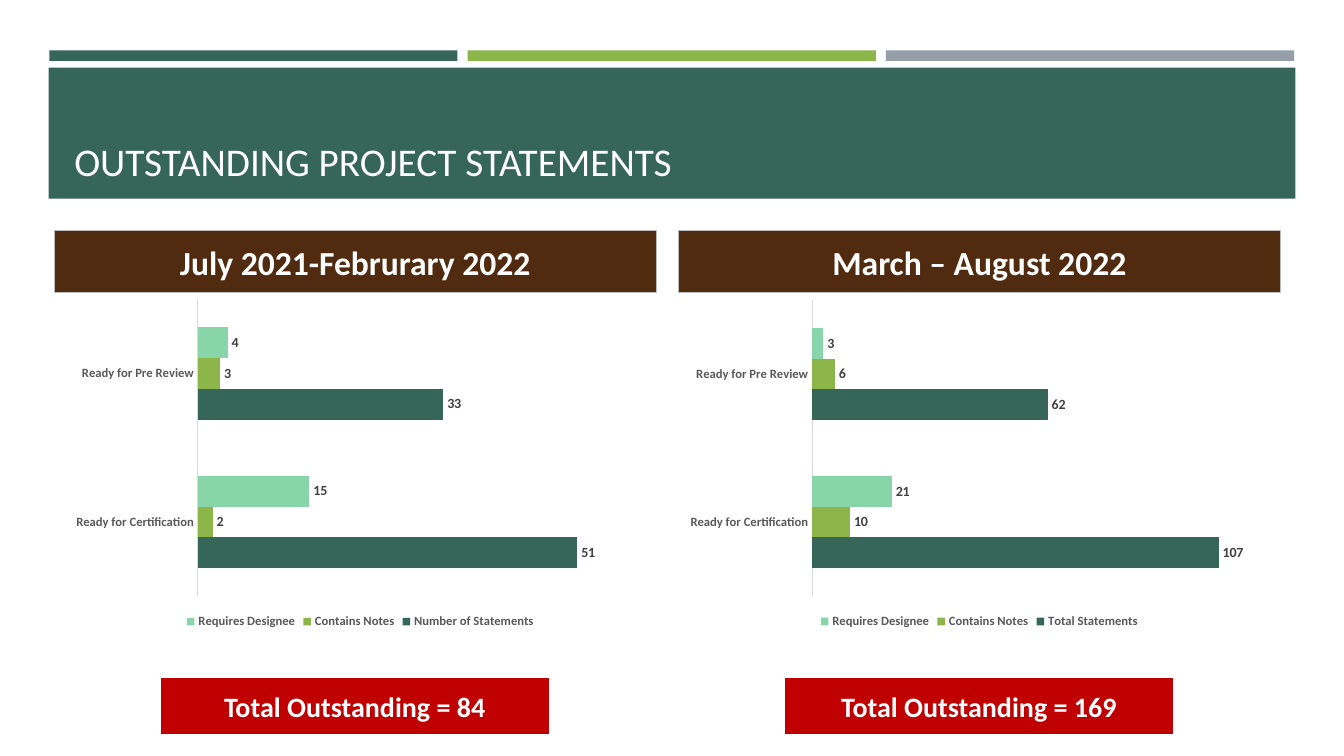
"""Build the slide on outstanding project statements with two bar charts."""
import pptx
import pptx.chart.data
import pptx.dml.color
import pptx.enum.chart
import pptx.enum.shapes
import pptx.enum.text
import pptx.util

Pt = pptx.util.Pt
enum = pptx.enum
FONT = "Calibri"
HUES = {
    "green": "366658", "lime": "8CB64A", "mint": "88D5A9", "gray": "969FA7",
    "brown": "502B10", "edge": "BDBDBD", "red": "C00000", "white": "FFFFFF",
    "axis": "D9D9D9", "text": "595959", "label": "404040",
}


def style(font, size, hue, bold=True):
    font.name = FONT
    font.size = Pt(size)
    font.bold = bold
    font.color.rgb = pptx.dml.color.RGBColor.from_string(HUES[hue])


def box(place, fill, line=None, text="", size=0, bold=True, title=False):
    left, top, width, height = place
    shape = slide.shapes.add_shape(
        enum.shapes.MSO_SHAPE.RECTANGLE, Pt(left), Pt(top), Pt(width), Pt(height))
    shape.shadow.inherit = False
    shape.fill.solid()
    shape.fill.fore_color.rgb = pptx.dml.color.RGBColor.from_string(HUES[fill])
    if line:
        shape.line.color.rgb = pptx.dml.color.RGBColor.from_string(HUES[line])
        shape.line.width = Pt(0.75)
    else:
        shape.line.fill.background()
    if text:
        frame = shape.text_frame
        frame.word_wrap = True
        frame.vertical_anchor = enum.text.MSO_ANCHOR.MIDDLE
        para = frame.paragraphs[0]
        para.alignment = enum.text.PP_ALIGN.CENTER
        run = para.add_run()
        run.text = text
        style(run.font, size, "white", bold)


deck = pptx.Presentation()
deck.slide_width = Pt(960)
deck.slide_height = Pt(540)
slide = deck.slides.add_slide(deck.slide_layouts[6])

for col, hue in enumerate(("green", "lime", "gray")):
    box((35.2 + 298.8 * col, 36, 291.6, 7.5), hue)
box((34.7, 48.3, 890.6, 93.6), "green")

title = slide.shapes.add_textbox(Pt(46), Pt(55.5), Pt(868.3), Pt(80))
title.text_frame.word_wrap = True
title.text_frame.vertical_anchor = enum.text.MSO_ANCHOR.BOTTOM
run = title.text_frame.paragraphs[0].add_run()
run.text = "OUTSTANDING PROJECT STATEMENTS"
style(run.font, 28, "white", False)

cats = ("Ready for Certification", "Ready for Pre Review")
panels = (
    ("July 2021-Februrary 2022", "Total Outstanding = 84", (46, 208.8, 422.7, 243.4),
     (("Number of Statements", (51, 33)), ("Contains Notes", (2, 3)),
      ("Requires Designee", (15, 4)))),
    ("March – August 2022", "Total Outstanding = 169", (484.6, 209.5, 429.8, 242.6),
     (("Total Statements", (107, 62)), ("Contains Notes", (10, 6)),
      ("Requires Designee", (21, 3)))),
)
for col, (head, total, place, rows) in enumerate(panels):
    shift = 445.8 * col
    box((38.9 + shift, 164.9, 429.8, 43.9), "brown", "edge", head, 24)
    box((115.2 + shift, 484.6, 276.5, 39.6), "red", "red", total, 20)

    data = pptx.chart.data.CategoryChartData()
    data.categories = cats
    for name, vals in rows:
        data.add_series(name, vals)
    chart = slide.shapes.add_chart(
        enum.chart.XL_CHART_TYPE.BAR_CLUSTERED, *map(Pt, place), data).chart
    chart.has_title = False
    chart.font.name = FONT
    chart.font.size = Pt(10)

    chart.has_legend = True
    chart.legend.position = enum.chart.XL_LEGEND_POSITION.BOTTOM
    chart.legend.include_in_layout = False
    style(chart.legend.font, 9, "text")

    axis = chart.category_axis
    axis.major_tick_mark = enum.chart.XL_TICK_MARK.NONE
    axis.format.line.color.rgb = pptx.dml.color.RGBColor.from_string(HUES["axis"])
    axis.format.line.width = Pt(0.75)
    style(axis.tick_labels.font, 9, "text")
    chart.value_axis.visible = False
    chart.value_axis.has_major_gridlines = False
    chart.value_axis.minimum_scale = 0

    plot = chart.plots[0]
    plot.gap_width = 182
    plot.overlap = 0
    plot.vary_by_categories = False
    for series, hue in zip(plot.series, ("green", "lime", "mint")):
        series.format.fill.solid()
        series.format.fill.fore_color.rgb = pptx.dml.color.RGBColor.from_string(HUES[hue])
        labels = series.data_labels
        labels.show_value = True
        labels.position = enum.chart.XL_LABEL_POSITION.OUTSIDE_END
        style(labels.font, 10, "label")

deck.save("out.pptx")
